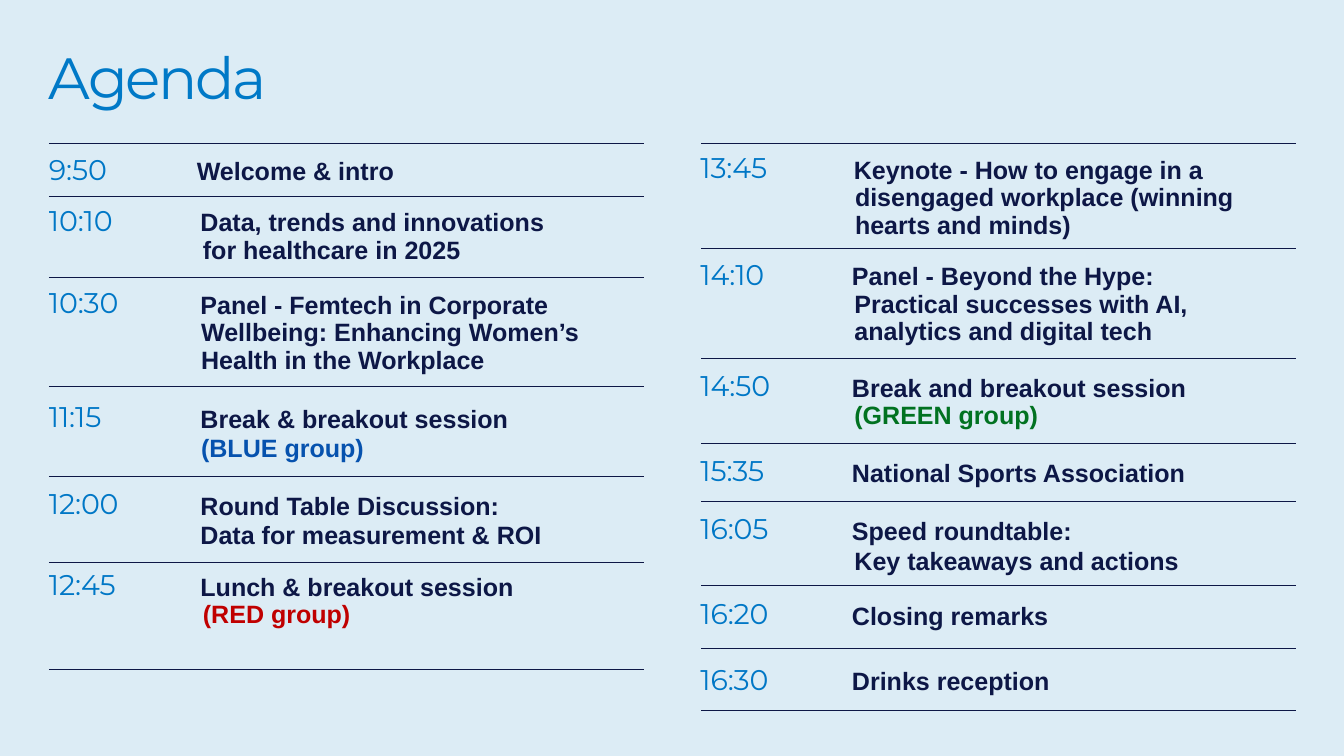
"""Build the two-column agenda slide."""
from dataclasses import dataclass

from lxml import etree
from pptx import Presentation
from pptx.dml.color import RGBColor
from pptx.enum.shapes import MSO_CONNECTOR
from pptx.enum.text import MSO_ANCHOR, MSO_AUTO_SIZE, PP_ALIGN
from pptx.oxml.ns import qn
from pptx.util import Pt

STRAIGHT = MSO_CONNECTOR.STRAIGHT
TOP = MSO_ANCHOR.TOP
LEFT = PP_ALIGN.LEFT
NO_FIT = MSO_AUTO_SIZE.NONE
GROW = MSO_AUTO_SIZE.SHAPE_TO_FIT_TEXT
SCALE = 9144
TITLE_ONLY = 5
TIGHT, LOOSE = 32.2, 34.6
EVENT_INSET = {None: 2, TIGHT: 7, LOOSE: 4}


def px(length):
    return length * SCALE


@dataclass(frozen=True)
class Theme:
    background: str = "DCECF5"
    title: str = "0079C7"
    time: str = "0077C6"
    ink: str = "0D1746"
    blue: str = "0652AE"
    red: str = "C00000"
    green: str = "017221"
    display_font: str = "Montserrat"
    body_font: str = "Arial"
    title_size: float = 68.5
    time_size: float = 33.5
    event_size: float = 29.5
    rule_width: float = 0.82


@dataclass(frozen=True)
class Session:
    rule: int
    top: int
    time: str
    text: str
    width: int
    group: str = ""
    accent: str = ""
    lines: int = 1
    pitch: float | None = None
    hang: int = 0
    shift: int = 0


THEME = Theme()
MORNING = [
    Session(234, 246, "9:50", "Welcome & intro", 327, shift=-6),
    Session(321, 330, "10:10", "Data, trends and innovations for healthcare in 2025", 569,
            lines=2, pitch=TIGHT, hang=4),
    Session(454, 465, "10:30",
            "Panel - Femtech in Corporate Wellbeing: Enhancing Women’s Health in the Workplace",
            626, lines=3, pitch=TIGHT, hang=1),
    Session(632, 651, "11:15", "Break & breakout session ", 509, "(BLUE group)", THEME.blue,
            lines=2, pitch=LOOSE, hang=1),
    Session(779, 793, "12:00", "Round Table Discussion: Data for measurement & ROI", 564,
            lines=2, pitch=LOOSE),
    Session(920, 926, "12:45", "Lunch & breakout session ", 518, "(RED group)", THEME.red,
            lines=2, pitch=TIGHT, hang=4),
]
AFTERNOON = [
    Session(234, 244, "13:45",
            "Keynote - How to engage in a disengaged workplace (winning hearts and minds)",
            628, lines=3, pitch=TIGHT, hang=2, shift=3),
    Session(407, 418, "14:10",
            "Panel - Beyond the Hype: Practical successes with AI, analytics and digital tech",
            555, lines=3, pitch=TIGHT, hang=4),
    Session(586, 601, "14:50", "Break and breakout session ", 553, "(GREEN group)", THEME.green,
            lines=2, pitch=TIGHT, hang=4),
    Session(725, 740, "15:35", "National Sports Association", 608),
    Session(820, 835, "16:05", "Speed roundtable:\vKey takeaways and actions", 669,
            lines=2, pitch=LOOSE, hang=4),
    Session(958, 974, "16:20", "Closing remarks", 326),
    Session(1061, 1081, "16:30", "Drinks reception", 328),
]


def add_span(para, text, *, font, size, color, bold=False, tracking=0):
    """Append text in the given format, with a line break at each vertical tab."""
    for index, line in enumerate(text.split("\v")):
        if index:
            para.add_line_break()
        span = para.add_run()
        span.text = line
        span.font.name = font
        span.font.size = Pt(size)
        span.font.bold = bold
        span.font.color.rgb = RGBColor.from_string(color)
        if tracking:
            span.font._element.set("spc", str(tracking))


class AgendaPage:
    """Holds the theme and the page, and draws each kind of element."""

    def __init__(self, deck, theme):
        self.theme = theme
        self.page = deck.slides.add_slide(deck.slide_layouts[TITLE_ONLY])
        fill = self.page.background.fill
        fill.solid()
        fill.fore_color.rgb = RGBColor.from_string(theme.background)

    def prepare(self, box, inset, fit):
        frame = box.text_frame
        frame.word_wrap = True
        frame.auto_size = fit
        frame.vertical_anchor = TOP
        frame.margin_left = frame.margin_right = frame.margin_bottom = 0
        frame.margin_top = px(inset)
        para = frame.paragraphs[0]
        para.alignment = LEFT
        return para

    def title(self, text, left, top, width, height):
        box = self.page.shapes.title
        box.left, box.top, box.width, box.height = map(px, (left, top, width, height))
        para = self.prepare(box, 1, NO_FIT)
        add_span(para, text, font=self.theme.display_font, size=self.theme.title_size,
                 color=self.theme.title, tracking=-270)

    def text_box(self, left, top, width, height, inset):
        box = self.page.shapes.add_textbox(*map(px, (left, top, width, height)))
        return self.prepare(box, inset, GROW)

    def rule(self, left, top, width):
        line = self.page.shapes.add_connector(
            STRAIGHT, px(left), px(top), px(left + width), px(top))
        line.line.color.rgb = RGBColor.from_string(self.theme.ink)
        line.line.width = Pt(self.theme.rule_width)
        etree.SubElement(line._element.spPr, qn("a:effectLst"))

    def time(self, text, left, top):
        para = self.text_box(left, top, 222, 59, 2)
        add_span(para, text, font=self.theme.display_font, size=self.theme.time_size,
                 color=self.theme.time, tracking=-10)

    def event(self, session, left, top):
        height = 52 + 45 * (session.lines - 1)
        para = self.text_box(left, top, session.width, height, EVENT_INSET[session.pitch])
        properties = para._p.get_or_add_pPr()
        properties.set("marL", str(px(1 + session.hang)))
        properties.set("indent", str(px(-session.hang)))
        if session.pitch:
            para.line_spacing = Pt(session.pitch)
        for text, color in ((session.text, self.theme.ink), (session.group, session.accent)):
            if text:
                add_span(para, text, font=self.theme.body_font,
                         size=self.theme.event_size, color=color, bold=True)

    def column(self, sessions, left, rule_left, end):
        for session in sessions:
            self.rule(rule_left, session.rule, 973)
            self.time(session.time, left + 1, session.top)
            self.event(session, left + 248 + session.shift, session.top + 6)
        self.rule(rule_left, end, 973)


def main():
    deck = Presentation()
    deck.slide_width, deck.slide_height = px(2199), px(1237)
    agenda = AgendaPage(deck, THEME)
    agenda.title("Agenda", 80, 67, 378, 117)
    agenda.column(MORNING, 79, 80, 1096)
    agenda.column(AFTERNOON, 1145, 1147, 1163)
    deck.save("out.pptx")


if __name__ == "__main__":
    main()
